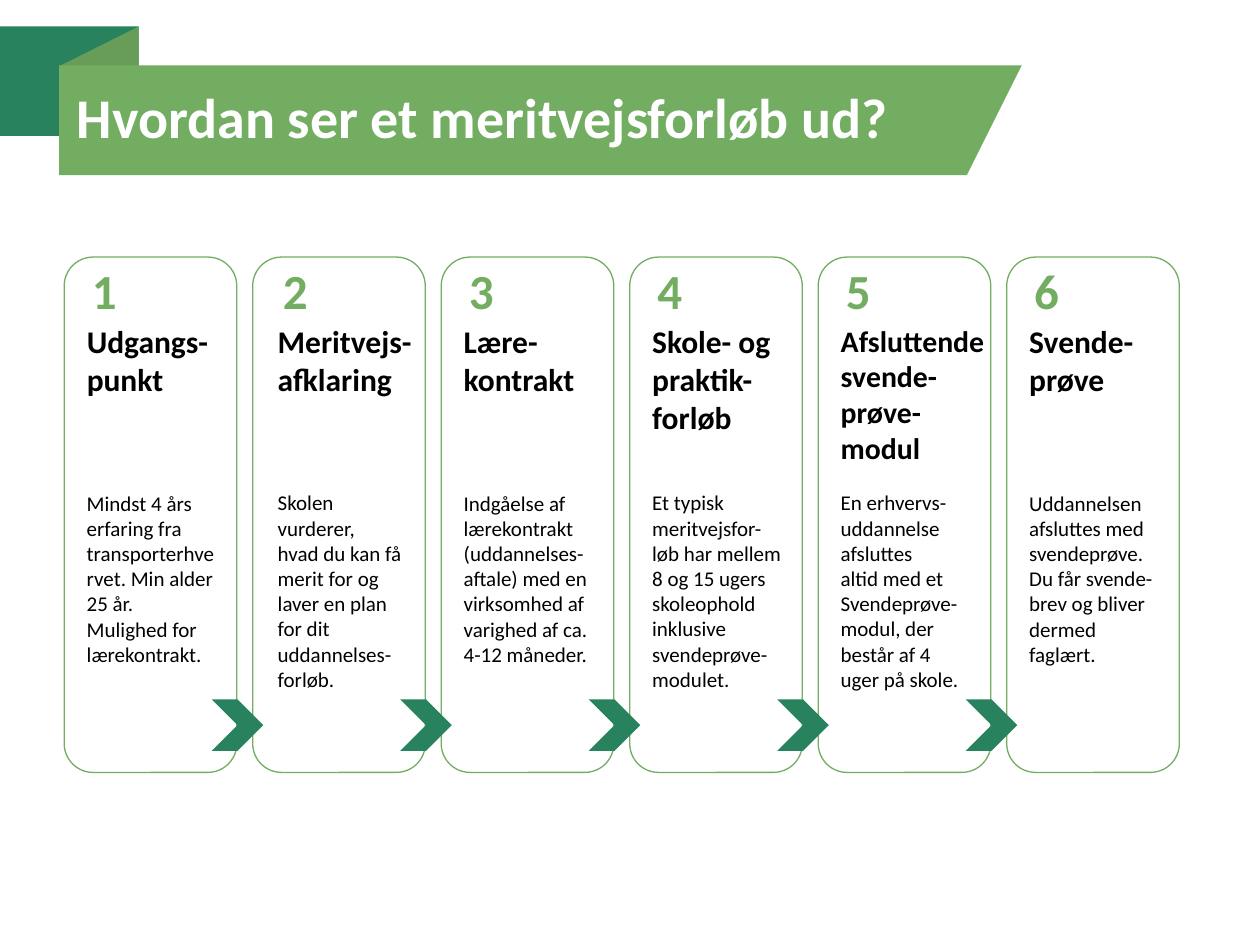
from pptx import Presentation
from pptx.dml.color import RGBColor
from pptx.enum import shapes, text
from pptx.util import Inches, Pt

TITLE = "Hvordan ser et meritvejsforløb ud?"
FONT = "Calibri"
GREEN, DARK, FOLD = "72AD62", "27825D", "679D59"
WHITE, BLACK = "FFFFFF", "000000"

# heading, size, width, heading lines, body paragraphs, body lines
STEPS = [
    ("Udgangs-punkt", 18, 1.18, 2,
     ["Mindst 4 års",
      "erfaring fra transporterhvervet. Min alder 25 år. "
      "Mulighed for lærekontrakt."], 7),
    ("Meritvejs-afklaring", 18, 1.27, 2,
     ["Skolen vurderer,",
      "hvad du kan få merit for og laver en plan for dit "
      "uddannelses-forløb."], 8),
    ("Lære-kontrakt", 18, 1.1, 2,
     ["Indgåelse af lærekontrakt",
      "(uddannelses-aftale) med en virksomhed af",
      "varighed af ca.", "4-12 måneder."], 7),
    ("Skole- og praktik-forløb", 18, 1.29, 3,
     ["Et typisk meritvejsfor-løb har mellem", "8 og 15 ugers",
      "skoleophold inklusive", "svendeprøve-modulet."], 8),
    ("Afsluttende svende-prøve-modul", 17, 1.42, 4,
     ["En erhvervs-uddannelse afsluttes", "altid med et",
      "Svendeprøve-modul, der består af 4 uger på skole."], 8),
    ("Svende-prøve", 18, 1.1, 2,
     ["Uddannelsen", "afsluttes med",
      "svendeprøve. Du får svende-brev og bliver dermed faglært."], 7),
]

LEFT, TOP, WIDTH, HEIGHT = 0.51, 2.04, 1.37, 4.09
PITCH = 1.496
LINE_HEIGHT = 1.22 / 72  # inches per point of text size

deck = Presentation()
deck.slide_width, deck.slide_height = Inches(10), Inches(7.5)
page = deck.slides.add_slide(deck.slide_layouts[5])


def color(value):
    return RGBColor.from_string(value)


def add_shape(kind, left, top, width, height, fill, line=None):
    shape = page.shapes.add_shape(
        kind, Inches(left), Inches(top), Inches(width), Inches(height))
    shape.shadow.inherit = False
    shape.fill.solid()
    shape.fill.fore_color.rgb = color(fill)
    if line:
        shape.line.color.rgb = color(line)
        shape.line.width = Pt(0.75)
    else:
        shape.line.fill.background()
    return shape


def style(para, size, ink, bold):
    para.alignment = text.PP_ALIGN.LEFT
    font = para.font
    font.name, font.size, font.bold = FONT, Pt(size), bold
    font.color.rgb = color(ink)


def add_text(paragraphs, left, top, width, lines, size, ink=BLACK, bold=False):
    height = 0.1 + lines * size * LINE_HEIGHT
    box = page.shapes.add_textbox(
        Inches(left), Inches(top), Inches(width), Inches(height))
    frame = box.text_frame
    frame.word_wrap = True
    frame.auto_size = text.MSO_AUTO_SIZE.SHAPE_TO_FIT_TEXT
    frame.text = "\n".join(paragraphs)
    for para in frame.paragraphs:
        style(para, size, ink, bold)


# Folded ribbon behind the title
kinds = shapes.MSO_SHAPE
add_shape(kinds.RECTANGLE, 0, 0.21, 1.1, 0.87, DARK)
fold = add_shape(kinds.FLOWCHART_EXTRACT, 0.47, 0.21, 0.63, 0.63, FOLD)
fold.rotation = 270
add_shape(kinds.RECTANGLE, 0.47, 0.52, 7.72, 0.87, GREEN)
add_shape(kinds.FLOWCHART_EXTRACT, 7.64, 0.36, 1.1, 1.1, WHITE)

# Title, brought in front of the ribbon
title = page.shapes.title
title.left, title.top = Inches(0.51), Inches(0.3)
title.width, title.height = Inches(9), Inches(1.25)
title.text_frame.text = TITLE
title.text_frame.vertical_anchor = text.MSO_ANCHOR.MIDDLE
style(title.text_frame.paragraphs[0], 32, WHITE, True)
title.element.getparent().append(title.element)

# Step cards
for index, (heading, size, width, lines, body, body_lines) in enumerate(STEPS):
    left = LEFT + index * PITCH
    inner = left + (0.1 if index == 1 else 0.08)
    add_shape(kinds.ROUNDED_RECTANGLE, left, TOP, WIDTH, HEIGHT, WHITE, GREEN)
    add_text([heading], inner, 2.51, width, lines, size, bold=True)
    add_text(body, inner, 3.84, 1.23, body_lines, 12)
    add_text([str(index + 1)], inner + 0.04, 2.02, 0.38, 1, 28, GREEN, True)

# Chevrons between neighbouring cards
for index in range(len(STEPS) - 1):
    add_shape(kinds.CHEVRON, LEFT + 1.17 + index * PITCH, 5.55, 0.41, 0.41, DARK)

deck.save("out.pptx")
